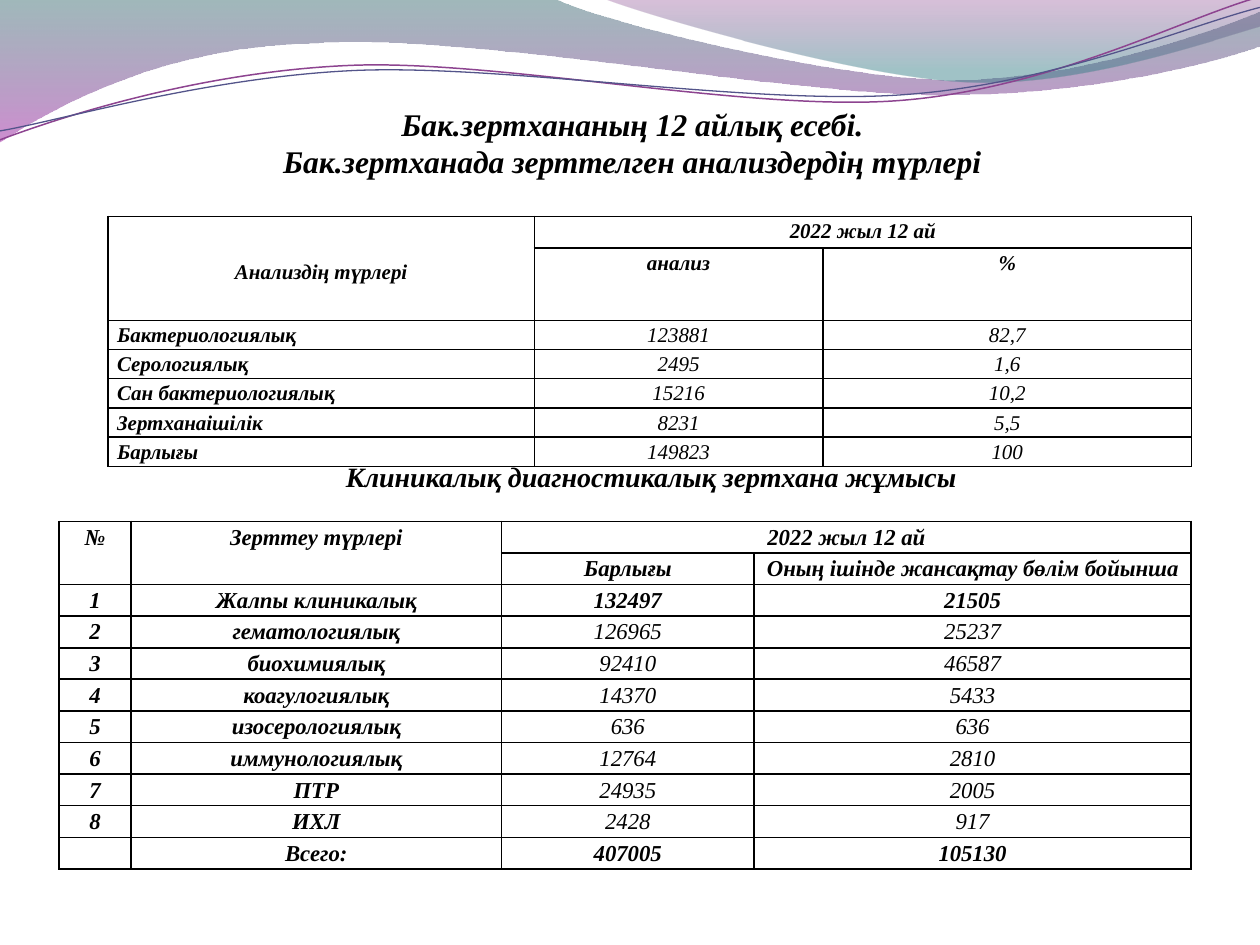
from lxml import etree
from pptx import Presentation
from pptx.dml.color import RGBColor
from pptx.enum.text import MSO_ANCHOR as ANCHOR, MSO_AUTO_SIZE as AUTO, PP_ALIGN as ALIGN
from pptx.oxml.ns import qn
from pptx.util import Cm, Pt

BLACK = RGBColor(0x00, 0x00, 0x00)
TEAL = RGBColor(0x2D, 0x63, 0x68)
MAGENTA = RGBColor(0xA5, 0x30, 0xA9)
PLUM = RGBColor(0x7F, 0x2F, 0x82)
AQUA = RGBColor(0x2F, 0x7B, 0x82)
VIOLET = RGBColor(0x8D, 0x44, 0x90)
INDIGO = RGBColor(0x53, 0x54, 0x8A)
FONT = "Times New Roman"


def add_outline(shapes, start, segments, close):
    """Draw segments in cm: one point is a straight line, three a Bezier curve."""
    emu = [(Cm(x), Cm(y)) for seg in segments for x, y in seg]
    builder = shapes.build_freeform(Cm(start[0]), Cm(start[1]), scale=1.0)
    builder.add_line_segments(emu, close=close)
    sp = builder.convert_to_shape()
    sp.shadow.inherit = False
    lines = iter(list(sp._element.spPr.iter(qn("a:lnTo"))))
    for seg in segments:
        first, *others = [next(lines) for _ in seg]
        if others:
            curve = etree.Element(qn("a:cubicBezTo"))
            first.addprevious(curve)
            for line in (first, *others):
                curve.append(line[0])
                line.getparent().remove(line)
    return sp


def write(p, text, size, bold=True, align=ALIGN.CENTER):
    p.alignment = align
    r = p.add_run()
    r.text = text
    look = {"name": FONT, "size": Pt(size), "bold": bold, "italic": True}
    for name, value in look.items():
        setattr(r.font, name, value)
    r.font.color.rgb = BLACK


prs = Presentation()
prs.slide_width, prs.slide_height = Cm(25.4), Cm(19.05)
slide = prs.slides.add_slide(prs.slide_layouts[5])
shapes = slide.shapes

# Translucent waves: start, segments, gradient stops (position, colour, opacity %)
waves = [
    ((0, 0),
     [[(11.18, -0.03)],
      [(12.09, 0.43), (16.87, 1.6), (19.25, 1.6)],
      [(21.67, 1.6), (24.33, 0.66), (25.4, 0.23)],
      [(25.43, 0.91)],
      [(24.97, 1.12), (22.1, 1.93), (18.95, 1.91)],
      [(15.8, 1.91), (9.7, 0.71), (6.53, 0.86)],
      [(3.28, 0.91), (1.17, 2.11), (-0.03, 2.87)]],
     [(0, TEAL, 45), (1, MAGENTA, 55)]),
    ((12.17, -0.03),
     [[(12.93, 0.28), (17.32, 1.57), (19.53, 1.65)],
      [(21.74, 1.75), (24.41, 0.81), (25.4, 0.53)],
      [(25.4, 0)]],
     [(0, PLUM, 30), (0.8, AQUA, 45)]),
]
for start, segments, stops in waves:
    sp = add_outline(shapes, start, segments, True)
    sp.line.fill.background()
    sp.fill.gradient()
    sp.fill.gradient_angle = 270
    for stop, (position, color, _) in zip(sp.fill.gradient_stops, stops):
        stop.position = position
        stop.color.rgb = color
    for clr, (_, _, opacity) in zip(sp._element.spPr.iter(qn("a:srgbClr")), stops):
        etree.SubElement(clr, qn("a:alpha"), val=str(opacity * 1000))

# Thin lines under the waves
curves = [
    ((0, 2.82),
     [[(1.22, 2.36), (4.01, 1.45), (7.04, 1.32)],
      [(10.03, 1.19), (15.06, 2.26), (18.11, 2.03)],
      [(21.16, 1.8), (23.83, 0.38), (25.35, -0.05)]], VIOLET, 0.85),
    ((0, 2.64),
     [[(1.19, 2.44), (4.17, 1.55), (7.19, 1.42)],
      [(10.24, 1.3), (15.16, 2.13), (18.21, 1.91)],
      [(21.23, 1.7), (23.9, 0.53), (25.4, 0.15)]], INDIGO, 0.75),
]
for start, segments, color, width in curves:
    sp = add_outline(shapes, start, segments, False)
    sp.fill.background()
    sp.line.color.rgb = color
    sp.line.width = Pt(width)

# Title and the heading of the second table
title = shapes.title
title.left, title.top, title.width, title.height = Cm(2.59), Cm(1.98), Cm(20.32), Cm(1.8)
heading = shapes.add_textbox(Cm(2.97), Cm(9.13), Cm(20.32), Cm(0.94))
texts = [
    (title, ANCHOR.TOP, 18, ["Бак.зертхананың 12 айлық есебі.",
                             "Бак.зертханада зерттелген анализдердің түрлері"]),
    (heading, ANCHOR.MIDDLE, 16, ["Клиникалық диагностикалық зертхана жұмысы"]),
]
for sp, anchor, size, lines in texts:
    tf = sp.text_frame
    tf.word_wrap = True
    tf.auto_size = AUTO.SHAPE_TO_FIT_TEXT
    tf.vertical_anchor = anchor
    for i, line in enumerate(lines):
        write(tf.add_paragraph() if i else tf.paragraphs[0], line, size)

# Tables; None marks a cell covered by a merge
analyses = [
    ["Анализдің түрлері", "2022 жыл 12 ай", None],
    [None, "анализ", "%"],
    ["Бактериологиялық", "123881", "82,7"],
    ["Серологиялық", "2495", "1,6"],
    ["Сан бактериологиялық", "15216", "10,2"],
    ["Зертханаішілік", "8231", "5,5"],
    ["Барлығы", "149823", "100"],
]
clinical = [
    ["№", "Зерттеу түрлері", "2022 жыл 12 ай", None],
    [None, None, "Барлығы", "Оның ішінде жансақтау бөлім бойынша"],
    ["1", "Жалпы клиникалық", "132497", "21505"],
    ["2", "гематологиялық", "126965", "25237"],
    ["3", "биохимиялық", "92410", "46587"],
    ["4", "коагулогиялық", "14370", "5433"],
    ["5", "изосерологиялық", "636", "636"],
    ["6", "иммунологиялық", "12764", "2810"],
    ["7", "ПТР", "24935", "2005"],
    ["8", "ИХЛ", "2428", "917"],
    ["", "Всего:", "407005", "105130"],
]
tables = [
    {"data": analyses, "at": (2.18, 4.36), "cols": [8.59, 5.82, 7.43],
     "rows": [0.64, 1.46] + [0.59, 0.58] * 2 + [0.59], "size": 12, "inset": 0.18,
     "label_cols": 1, "bold_rows": {0, 1}, "left_labels": True},
    {"data": clinical, "at": (1.19, 10.51), "cols": [1.45, 7.47, 5.09, 8.81],
     "rows": [0.63, 0.64] * 5 + [0.63], "size": 13, "inset": 0.13,
     "label_cols": 2, "bold_rows": {0, 1, 2, 10}, "left_labels": False},
]
for t in tables:
    data, cols, rows = t["data"], t["cols"], t["rows"]
    table = shapes.add_table(len(rows), len(cols), *map(Cm, t["at"]),
                             Cm(sum(cols)), Cm(sum(rows))).table
    for col, width in zip(table.columns, cols):
        col.width = Cm(width)
    for row, height in zip(table.rows, rows):
        row.height = Cm(height)
    for c in range(t["label_cols"]):
        table.cell(0, c).merge(table.cell(1, c))
    table.cell(0, t["label_cols"]).merge(table.cell(0, len(cols) - 1))
    for r, values in enumerate(data):
        for c, value in enumerate(values):
            cell = table.cell(r, c)
            cell.margin_left = cell.margin_right = Cm(t["inset"])
            cell.margin_top = cell.margin_bottom = 0
            cell.fill.background()
            for i, side in enumerate(("lnL", "lnR", "lnT", "lnB")):
                ln = etree.Element(qn(f"a:{side}"), w=str(Pt(1)))
                fill = etree.SubElement(ln, qn("a:solidFill"))
                etree.SubElement(fill, qn("a:srgbClr"), val=str(BLACK))
                cell._tc.tcPr.insert(i, ln)
            if value is None:
                continue
            p = cell.text_frame.paragraphs[0]
            if not value:
                etree.SubElement(p._p, qn("a:endParaRPr"), sz=str(t["size"] * 100))
                continue
            p.line_spacing = 1.15
            p.space_after = Pt(10)
            label = t["left_labels"] and c == 0 and r > 1
            write(p, value, t["size"], r in t["bold_rows"] or c < t["label_cols"],
                  ALIGN.LEFT if label else ALIGN.CENTER)
    if t["left_labels"]:
        table.cell(0, 0).margin_top = Cm(0.82)

prs.save("out.pptx")
